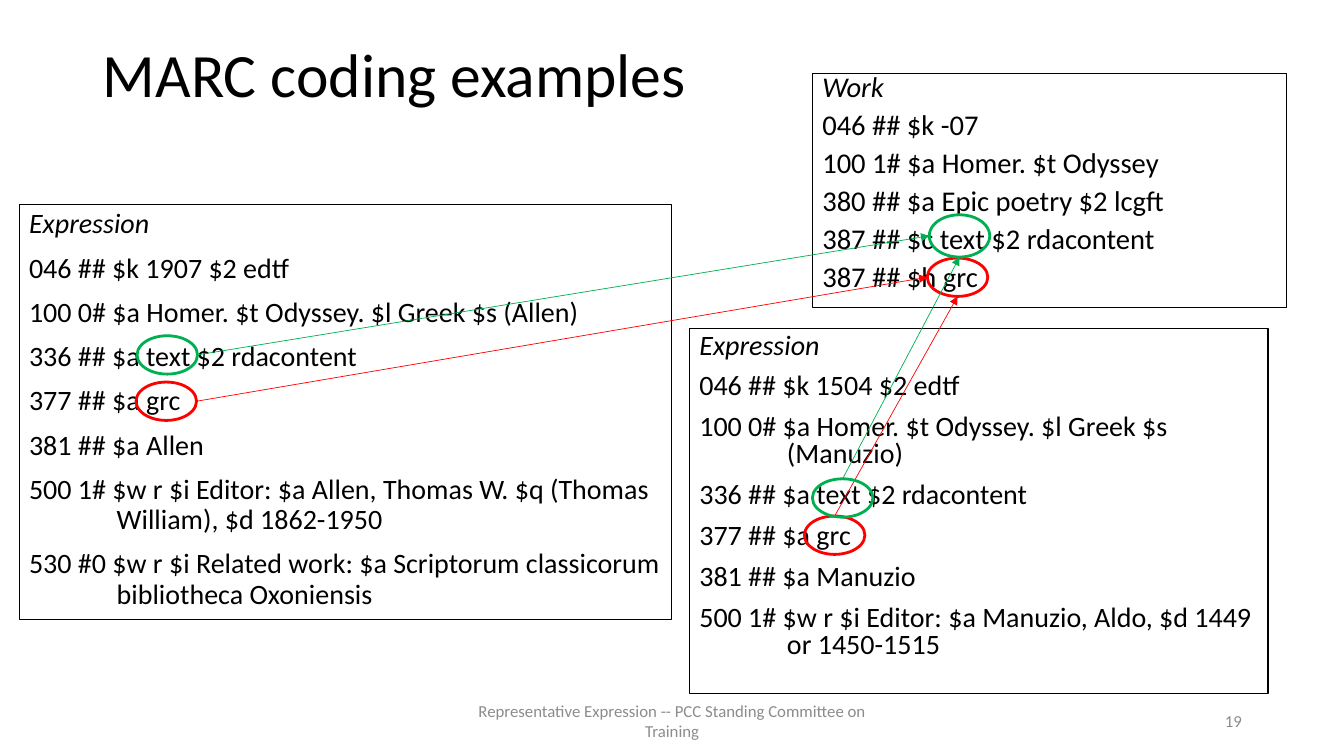
from lxml import etree
from pptx import Presentation
from pptx.dml.color import RGBColor
from pptx.enum import shapes, text
from pptx.oxml import ns
from pptx.util import Pt

COLORS = {"ink": "000000", "gray": "8C8C8C", "red": "FF0000", "green": "00B050"}
FONT = "Calibri"
HANG = 62.6
RING_W, RING_H = 43.2, 27.4

WORK = [
    "Work",
    "046 ## $k -07",
    "100 1# $a Homer. $t Odyssey",
    "380 ## $a Epic poetry $2 lcgft",
    "387 ## $c text $2 rdacontent",
    "387 ## $h grc",
]
ALLEN = [
    "Expression",
    "046 ## $k 1907 $2 edtf",
    "100 0# $a Homer. $t Odyssey. $l Greek $s (Allen)",
    "336 ## $a text $2 rdacontent",
    "377 ## $a grc",
    "381 ## $a Allen",
    "500 1# $w r $i Editor: $a Allen, Thomas W. $q (Thomas William), $d 1862-1950",
    "530 #0 $w r $i Related work: $a Scriptorum classicorum bibliotheca Oxoniensis",
]
MANUZIO = [
    "Expression",
    "046 ## $k 1504 $2 edtf",
    "100 0# $a Homer. $t Odyssey. $l Greek $s (Manuzio)",
    "336 ## $a text $2 rdacontent",
    "377 ## $a grc",
    "381 ## $a Manuzio",
    "500 1# $w r $i Editor: $a Manuzio, Aldo, $d 1449 or 1450-1515",
]


def paint(name):
    return RGBColor.from_string(COLORS[name])


def style(para, size, color="ink"):
    para.font.name = FONT
    para.font.size = Pt(size)
    para.font.color.rgb = paint(color)


def set_title(slide, words):
    title = slide.shapes.title
    title.left, title.top, title.width, title.height = map(Pt, (66.2, 28.1, 828, 104.4))
    frame = title.text_frame
    frame.text = words
    frame.vertical_anchor = text.MSO_ANCHOR.TOP
    para = frame.paragraphs[0]
    para.alignment = text.PP_ALIGN.LEFT
    para.line_spacing = 0.9
    style(para, 44)


def add_record(slide, spot, rows, size, pitch, hang=0):
    """Bordered record: an italic heading, then its fields."""
    box = slide.shapes.add_textbox(*map(Pt, spot))
    box.line.color.rgb = paint("ink")
    box.line.width = Pt(0.75)
    frame = box.text_frame
    frame.word_wrap = True
    for i, row in enumerate(rows):
        para = frame.paragraphs[0] if i == 0 else frame.add_paragraph()
        para.text = row
        para.line_spacing = pitch
        para.space_before = Pt(10)
        style(para, size)
        para.font.italic = i == 0
        if hang:
            props = para._p.get_or_add_pPr()
            props.set("marL", str(Pt(hang)))
            props.set("indent", str(-Pt(hang)))


def add_note(slide, spot, words, align):
    frame = slide.shapes.add_textbox(*map(Pt, spot)).text_frame
    frame.word_wrap = True
    frame.vertical_anchor = text.MSO_ANCHOR.MIDDLE
    frame.text = words
    frame.paragraphs[0].alignment = align
    style(frame.paragraphs[0], 12, "gray")


def add_ring(slide, x, y, color, high=RING_H):
    ring = slide.shapes.add_shape(
        shapes.MSO_SHAPE.OVAL, Pt(x), Pt(y), Pt(RING_W), Pt(high))
    ring.shadow.inherit = False
    ring.fill.background()
    ring.line.color.rgb = paint(color)
    ring.line.width = Pt(2)
    return ring


def add_arrow(slide, start, end, color):
    arrow = slide.shapes.add_connector(shapes.MSO_CONNECTOR.STRAIGHT, *start, *end)
    arrow.line.color.rgb = paint(color)
    arrow.line.width = Pt(0.5)
    etree.SubElement(arrow.line._get_or_add_ln(), ns.qn("a:tailEnd"), type="triangle")
    etree.SubElement(arrow._element.spPr, ns.qn("a:effectLst"))


def link_codes(slide, color, allen, manuzio, work, high):
    """Ring one code in each record and point both expressions to the work."""
    left = add_ring(slide, *allen, color)
    low = add_ring(slide, *manuzio, color)
    goal = add_ring(slide, *work, color, high)
    add_arrow(slide, (left.left + left.width, left.top + left.height // 2),
              (goal.left, goal.top + goal.height // 2), color)
    add_arrow(slide, (low.left + low.width // 2, low.top),
              (goal.left + goal.width // 2, goal.top + goal.height), color)


def main():
    deck = Presentation()
    deck.slide_width, deck.slide_height = Pt(960), Pt(540)
    slide = deck.slides.add_slide(deck.slide_layouts[5])

    # Title and work record
    set_title(slide, "MARC coding examples")
    add_record(slide, (580.3, 52.6, 338.4, 167), WORK, 20.4, 0.7)

    # Footer and page number
    add_note(slide, (318.2, 500.4, 324, 28.8),
             "Representative Expression -- PCC Standing Committee on Training",
             text.PP_ALIGN.CENTER)
    add_note(slide, (678.2, 500.4, 216, 28.8), "19", text.PP_ALIGN.RIGHT)

    # Expression records
    add_record(slide, (13.7, 146.2, 465.8, 296.6), ALLEN, 20, 0.9, HANG)
    add_record(slide, (492.5, 234.7, 413.3, 260.6), MANUZIO, 20, 0.8, HANG)

    # Matching codes: language, then content type
    link_codes(slide, "red", (97.2, 272.9), (574.6, 368.6), (662.4, 184.3), RING_H)
    link_codes(slide, "green", (97.9, 239.8), (580.3, 342), (663.8, 153.4), 30.2)

    deck.save("out.pptx")


if __name__ == "__main__":
    main()
